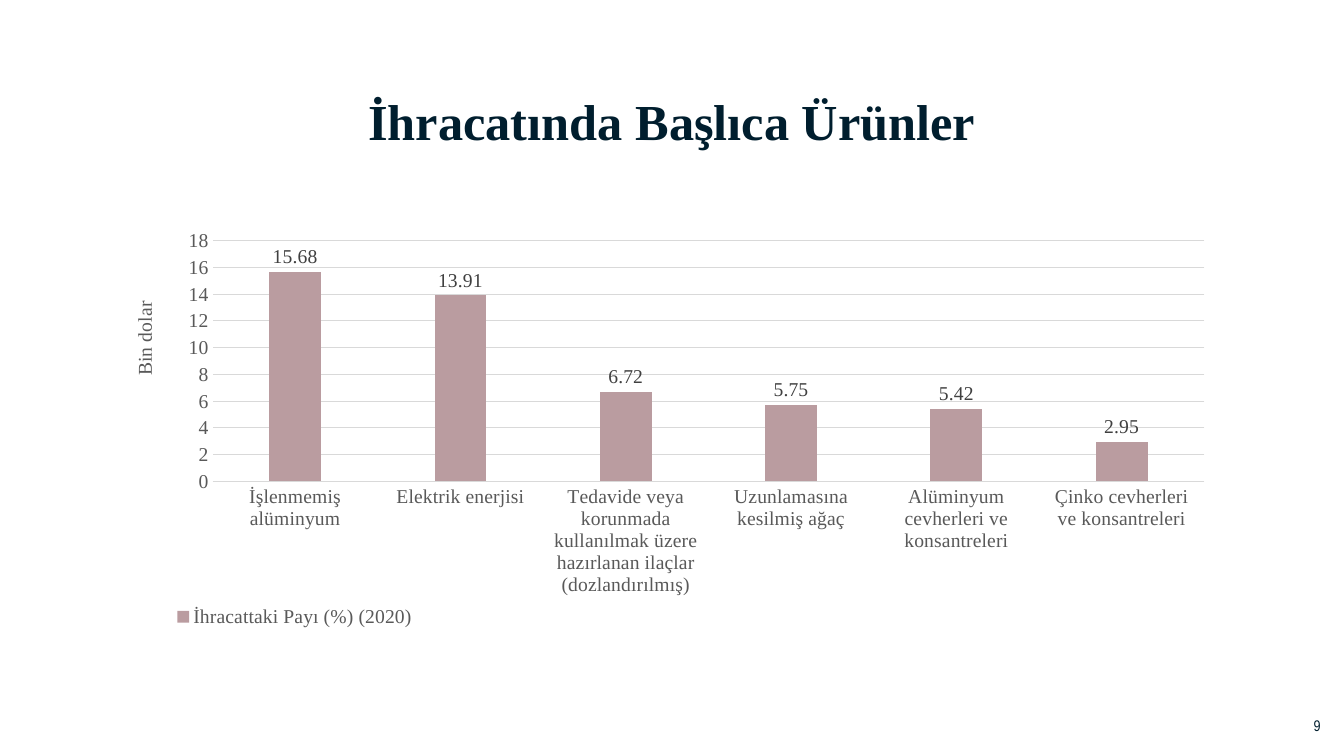
import pptx
import pptx.util
import pptx.chart.data
import pptx.enum.chart
import pptx.enum.text
import pptx.dml.color
import pptx.oxml

Cm, Pt = pptx.util.Cm, pptx.util.Pt
enum = pptx.enum.chart
align = pptx.enum.text.PP_ALIGN
middle = pptx.enum.text.MSO_ANCHOR.MIDDLE
serif = "Times New Roman"
hues = {"navy": "001E2E", "bar": "BA9CA0", "grid": "D9D9D9",
        "axis": "595959", "label": "404040", "white": "FFFFFF"}


def style(font, size, hue, name=serif, bold=False):
    form = {"size": Pt(size), "name": name, "bold": bold}
    for key, value in form.items():
        setattr(font, key, value)
    font.color.rgb = pptx.dml.color.RGBColor.from_string(hues[hue])


def place(node, index, box, inner=False):
    """Give a chart part a fixed spot, in fractions of the chart."""
    for old in node.findall(pptx.oxml.ns.qn("c:layout")):
        node.remove(old)
    tags = '<c:layoutTarget val="inner"/>' if inner else ""
    tags += '<c:xMode val="edge"/><c:yMode val="edge"/>'
    tags += "".join(f'<c:{key} val="{value}"/>' for key, value in zip("xywh", box))
    node.insert(index, pptx.oxml.parse_xml(
        f'<c:layout {pptx.oxml.ns.nsdecls("c")}>'
        f"<c:manualLayout>{tags}</c:manualLayout></c:layout>"))


deck = pptx.Presentation()
deck.slide_width, deck.slide_height = Cm(33.87), Cm(19.05)
slide = deck.slides.add_slide(deck.slide_layouts[5])

# Title
title = slide.shapes.title
spot = {"left": 3.18, "top": 1.22, "width": 27.51, "height": 3.84}
for key, value in spot.items():
    setattr(title, key, Cm(value))
title.fill.solid()
title.fill.fore_color.rgb = pptx.dml.color.RGBColor.from_string(hues["white"])
title.text_frame.text = "İhracatında Başlıca Ürünler"
title.text_frame.vertical_anchor = middle
para = title.text_frame.paragraphs[0]
para.alignment, para.line_spacing = align.CENTER, 0.9
style(para.runs[0].font, 36, "navy", bold=True)

# Chart data
shares = {
    "İşlenmemiş alüminyum": 15.68,
    "Elektrik enerjisi": 13.91,
    "Tedavide veya korunmada kullanılmak üzere hazırlanan ilaçlar (dozlandırılmış)": 6.72,
    "Uzunlamasına kesilmiş ağaç": 5.75,
    "Alüminyum cevherleri ve konsantreleri": 5.42,
    "Çinko cevherleri ve konsantreleri": 2.95,
}
data = pptx.chart.data.CategoryChartData()
data.categories = list(shares)
data.add_series("İhracattaki Payı (%) (2020)", list(shares.values()))
chart = slide.shapes.add_chart(
    enum.XL_CHART_TYPE.COLUMN_CLUSTERED,
    Cm(2.95), Cm(5.59), Cm(27.99), Cm(10.59), data).chart
chart.has_title = False
style(chart.font, 14, "axis")

# Bars and their labels
plot = chart.plots[0]
plot.gap_width, plot.overlap, plot.vary_by_categories = 219, -27, False
bars = plot.series[0]
bars.format.fill.solid()
bars.format.fill.fore_color.rgb = pptx.dml.color.RGBColor.from_string(hues["bar"])
labels = bars.data_labels
labels.show_value = True
labels.position = enum.XL_LABEL_POSITION.OUTSIDE_END
style(labels.font, 14, "label")

# Axes
cats, vals = chart.category_axis, chart.value_axis
for axis in (cats, vals):
    axis.major_tick_mark = axis.minor_tick_mark = enum.XL_TICK_MARK.NONE
    style(axis.tick_labels.font, 14, "axis")
vals.minimum_scale, vals.maximum_scale, vals.major_unit = 0, 18, 2
vals.format.line.fill.background()
for line in (cats.format.line, vals.major_gridlines.format.line):
    line.color.rgb = pptx.dml.color.RGBColor.from_string(hues["grid"])
    line.width = Pt(0.75)
name = vals.axis_title
name.text_frame.text = "Bin dolar"
style(name.text_frame.paragraphs[0].runs[0].font, 14, "axis")

# Legend
chart.has_legend = True
legend = chart.legend
legend.position = enum.XL_LEGEND_POSITION.BOTTOM
legend.include_in_layout = False
style(legend.font, 14, "axis")

# Fixed spots of the chart parts
area = chart._chartSpace.find(".//" + pptx.oxml.ns.qn("c:plotArea"))
place(area, 0, (0.086, 0.045, 0.893, 0.573), inner=True)
place(name._element, 1, (0.01, 0.18))
place(legend._element, 1, (0.05, 0.9, 0.22, 0.08))

# Page number
page = slide.shapes.add_textbox(Cm(32.23), Cm(17.78), Cm(1.3), Cm(1.02))
page.text_frame.word_wrap = True
page.text_frame.vertical_anchor = middle
para = page.text_frame.paragraphs[0]
para.text, para.alignment = "9", align.RIGHT
style(para.runs[0].font, 11, "navy", "Arial Narrow")

deck.save("out.pptx")
